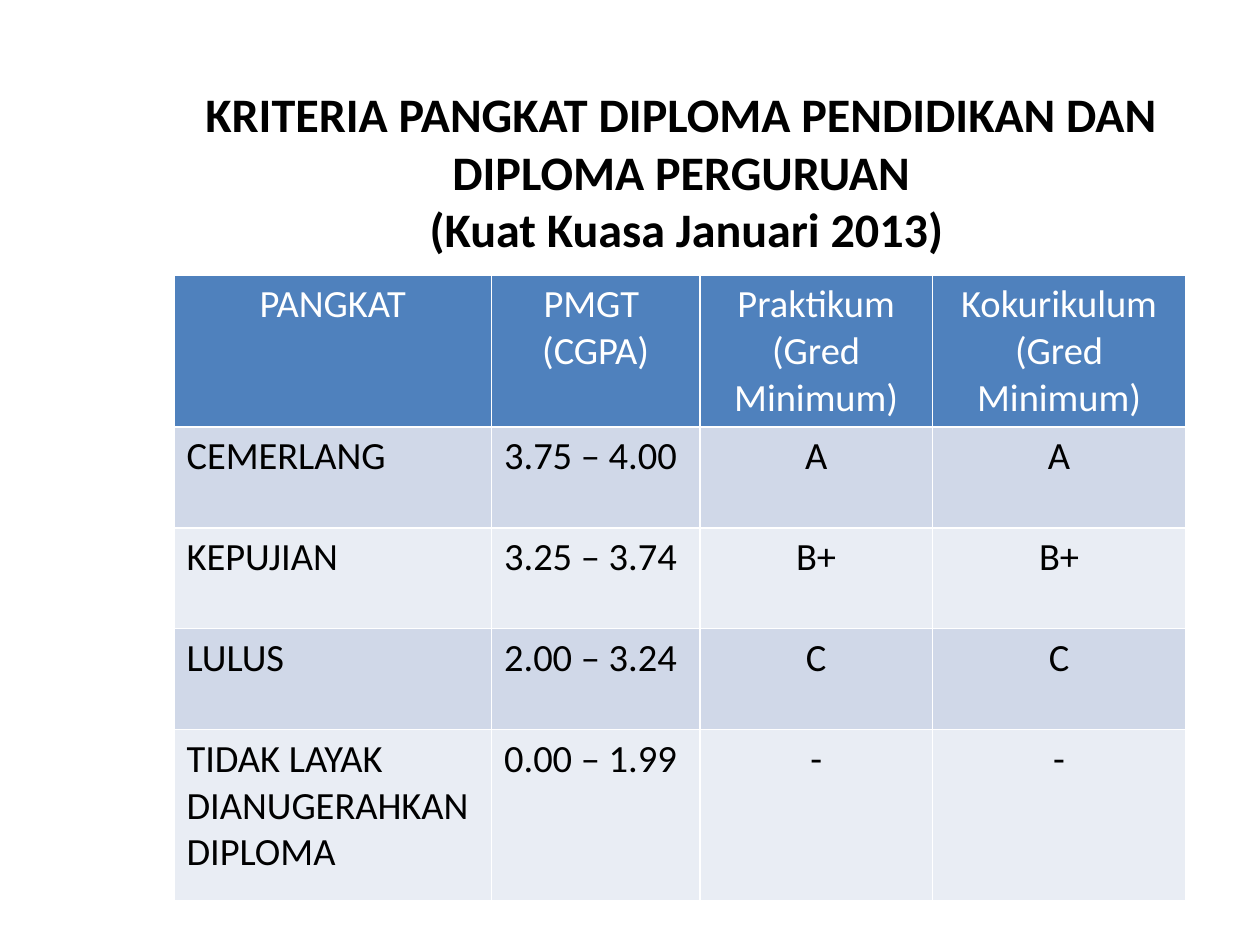
from pptx import Presentation
from pptx.dml.color import RGBColor
from pptx.enum.text import MSO_ANCHOR, PP_ALIGN
from pptx.util import Pt

BLACK = RGBColor(0x00, 0x00, 0x00)
WHITE = RGBColor(0xFF, 0xFF, 0xFF)
HEADER_BLUE = RGBColor(0x4F, 0x81, 0xBD)
BANDS = (RGBColor(0xE9, 0xED, 0xF4), RGBColor(0xD0, 0xD8, 0xE8))

TITLE = ("KRITERIA PANGKAT DIPLOMA PENDIDIKAN DAN DIPLOMA PERGURUAN\v"
         " (Kuat Kuasa Januari 2013)")
ROWS = [
    ("PANGKAT", "PMGT \n(CGPA)", "Praktikum (Gred Minimum)",
     "Kokurikulum (Gred Minimum)"),
    ("CEMERLANG", "3.75 – 4.00", "A", "A"),
    ("KEPUJIAN", "3.25 – 3.74", "B+", "B+"),
    ("LULUS", "2.00 – 3.24", "C", "C"),
    ("TIDAK LAYAK DIANUGERAHKAN DIPLOMA", "0.00 – 1.99", "-", "-"),
]
COL_WIDTHS = (181.5, 119, 133, 144.7)
ROW_HEIGHTS = (87, 57.6, 57.6, 57.6, 98)


def write_text(tf, text, align, size, color, bold=False):
    tf.text = text
    font_format = {"name": "Calibri", "size": Pt(size), "bold": bold}
    for p in tf.paragraphs:
        p.alignment = align
        for r in p.runs:
            for key, value in font_format.items():
                setattr(r.font, key, value)
            r.font.color.rgb = color


def add_title(s):
    tf = s.shapes.add_textbox(Pt(0), Pt(44.6), Pt(720), Pt(106)).text_frame
    frame_format = {"word_wrap": True, "vertical_anchor": MSO_ANCHOR.MIDDLE,
                    "margin_left": Pt(65.5)}
    for key, value in frame_format.items():
        setattr(tf, key, value)
    write_text(tf, TITLE, PP_ALIGN.CENTER, 27.5, BLACK, bold=True)


def add_criteria_table(s):
    table = s.shapes.add_table(len(ROWS), len(COL_WIDTHS), Pt(99.4), Pt(157),
                               Pt(sum(COL_WIDTHS)), Pt(sum(ROW_HEIGHTS))).table
    for column, width in zip(table.columns, COL_WIDTHS):
        column.width = Pt(width)
    for i, (row, height, texts) in enumerate(zip(table.rows, ROW_HEIGHTS, ROWS)):
        row.height = Pt(height)
        header = i == 0
        for j, (cell, text) in enumerate(zip(row.cells, texts)):
            cell.fill.solid()
            cell.fill.fore_color.rgb = HEADER_BLUE if header else BANDS[i % 2]
            centred = header or j >= 2
            write_text(cell.text_frame, text,
                       PP_ALIGN.CENTER if centred else PP_ALIGN.LEFT,
                       22, WHITE if header else BLACK)


def main():
    prs = Presentation()
    prs.slide_width, prs.slide_height = Pt(720), Pt(540)
    s = prs.slides.add_slide(prs.slide_layouts[6])
    add_title(s)
    add_criteria_table(s)
    prs.save("out.pptx")


if __name__ == "__main__":
    main()
